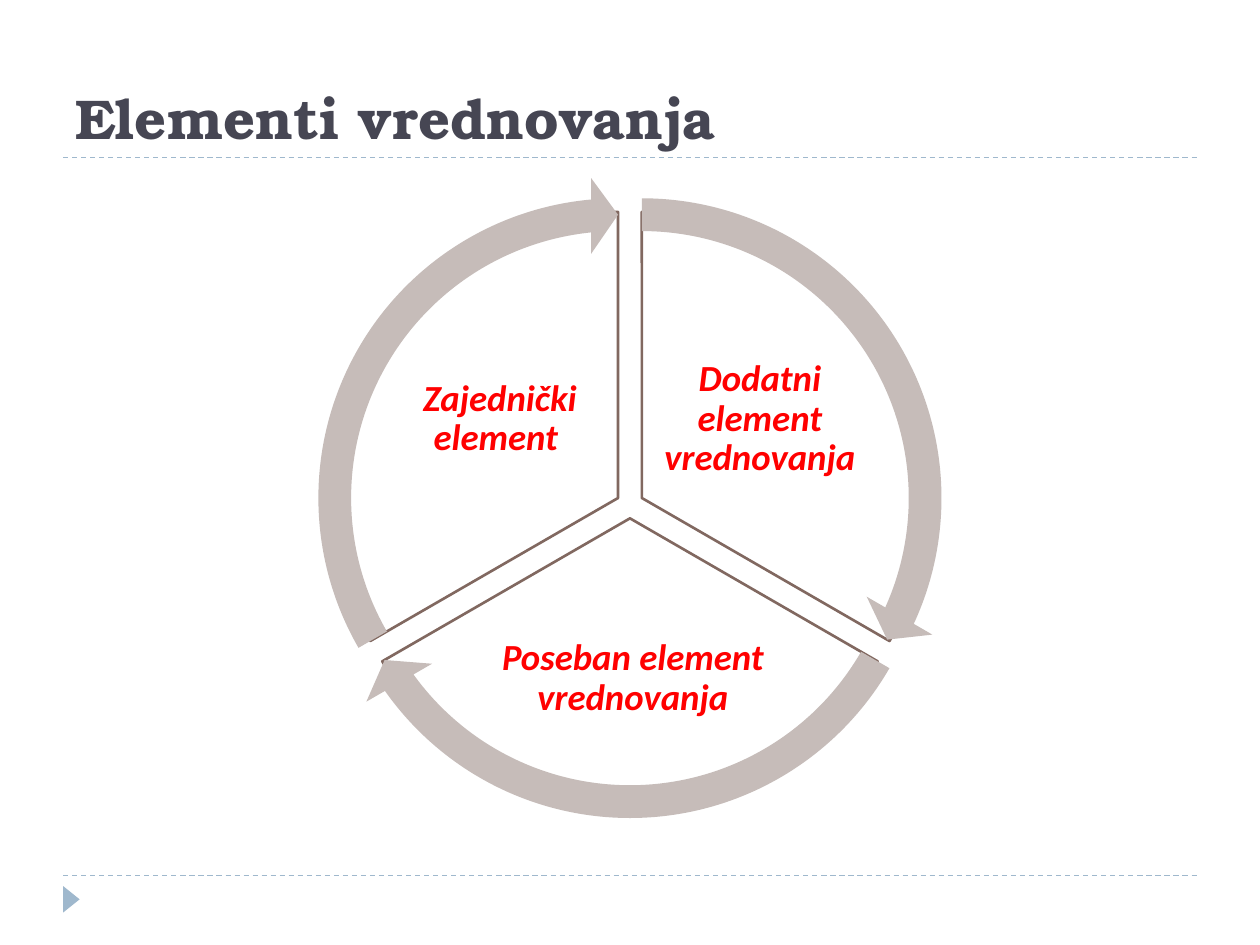
from dataclasses import dataclass

from lxml import etree
from pptx import Presentation
from pptx import util as u
from pptx.dml.color import RGBColor
from pptx.enum import dml, shapes, text
from pptx.oxml import ns


@dataclass(frozen=True)
class Theme:
    title_color: str = "464653"
    label_color: str = "FF0000"
    rule_color: str = "9FB8CD"
    sector_fill: str = "FFFFFF"
    sector_line: str = "816860"
    arrow_fill: str = "C6BCB9"
    title_font: str = "TeX Gyre Bonum"
    label_font: str = "Calibri"
    title_size: int = 32
    label_size: int = 21


def apply(target, values):
    for name, value in values.items():
        setattr(target, name, value)


class SlideBuilder:
    def __init__(self, slide, theme):
        self.slide = slide
        self.theme = theme

    def rule(self, left, right, y):
        line = self.slide.shapes.add_connector(
            shapes.MSO_CONNECTOR.STRAIGHT, u.Cm(left), u.Cm(y), u.Cm(right), u.Cm(y))
        line.line.color.rgb = RGBColor.from_string(self.theme.rule_color)
        apply(line.line, {"width": u.Pt(0.75), "dash_style": dml.MSO_LINE.DASH})
        etree.SubElement(line._element.spPr, ns.qn("a:effectLst"))

    def shape(self, kind, center, size, fill, outline=None, adjustments=(), rotation=0):
        (x, y), (width, height) = center, size
        shape = self.slide.shapes.add_shape(
            kind, u.Cm(x - width / 2), u.Cm(y - height / 2), u.Cm(width), u.Cm(height))
        shape.shadow.inherit = False
        shape.rotation = rotation
        for index, value in enumerate(adjustments):
            shape.adjustments[index] = value
        shape.fill.solid()
        shape.fill.fore_color.rgb = RGBColor.from_string(fill)
        if outline:
            shape.line.color.rgb = RGBColor.from_string(outline)
            shape.line.width = u.Pt(1.5)
        else:
            shape.line.fill.background()

    def text(self, words, center, size, color, frame_format, para_format, font_format):
        (x, y), (width, height) = center, size
        box = self.slide.shapes.add_textbox(
            u.Cm(x - width / 2), u.Cm(y - height / 2), u.Cm(width), u.Cm(height))
        apply(box.text_frame, {"word_wrap": True, **frame_format})
        para = box.text_frame.paragraphs[0]
        apply(para, para_format)
        span = para.add_run()
        span.text = words
        span.font.color.rgb = RGBColor.from_string(color)
        apply(span.font, {"bold": True, **font_format})

    def title(self, words, center, size):
        self.text(words, center, size, self.theme.title_color,
                  {"vertical_anchor": text.MSO_ANCHOR.BOTTOM}, {},
                  {"name": self.theme.title_font, "size": u.Pt(self.theme.title_size)})

    def label(self, words, center, size):
        sides = ("left", "top", "right", "bottom")
        margins = {f"margin_{side}": u.Cm(0.07) for side in sides}
        self.text(words, center, size, self.theme.label_color,
                  {"vertical_anchor": text.MSO_ANCHOR.MIDDLE, **margins},
                  {"alignment": text.PP_ALIGN.CENTER, "line_spacing": 0.9},
                  {"name": self.theme.label_font, "size": u.Pt(self.theme.label_size),
                   "italic": True})

    def sector(self, center, angles):
        self.shape(shapes.MSO_SHAPE.PIE, center, (11.53, 11.53),
                   self.theme.sector_fill, self.theme.sector_line, angles)

    def cycle_arrow(self, center, head, tail):
        self.shape(shapes.MSO_SHAPE.CIRCULAR_ARROW, center, (12.95, 12.95),
                   self.theme.arrow_fill, adjustments=(0.051, 3.275, head, tail, 0.059))


SECTORS = [
    ("Dodatni element vrednovanja ", (12.94, 10.04), (162, 18),
     (15.32, 8.45), (4.11, 3.43), (14.725, 161.994)),
    ("Poseban element vrednovanja", (12.7, 10.45), (18, 90),
     (12.76, 13.68), (6.17, 3.02), (86.72, 18.005)),
    ("Zajednički element ", (12.46, 10.04), (90, 162),
     (10.08, 8.45), (4.11, 3.43), (158.73, 90)),
]


def main():
    deck = Presentation()
    apply(deck, {"slide_width": u.Cm(25.4), "slide_height": u.Cm(19.05)})
    theme = Theme()
    builder = SlideBuilder(deck.slides.add_slide(deck.slide_layouts[6]), theme)

    for y in (17.65, 3.17):
        builder.rule(1.27, 24.13, y)
    builder.shape(shapes.MSO_SHAPE.ISOSCELES_TRIANGLE, (1.44, 18.13), (0.53, 0.33),
                  theme.rule_color, rotation=90)
    builder.title("Elementi vrednovanja", (12.7, 1.8), (22.86, 2.74))

    for words, center, angles, label_center, label_size, _ in SECTORS:
        builder.sector(center, angles)
        builder.label(words, label_center, label_size)
    for _, center, _, _, _, (head, tail) in SECTORS:
        builder.cycle_arrow(center, head, tail)

    deck.save("out.pptx")


if __name__ == "__main__":
    main()
